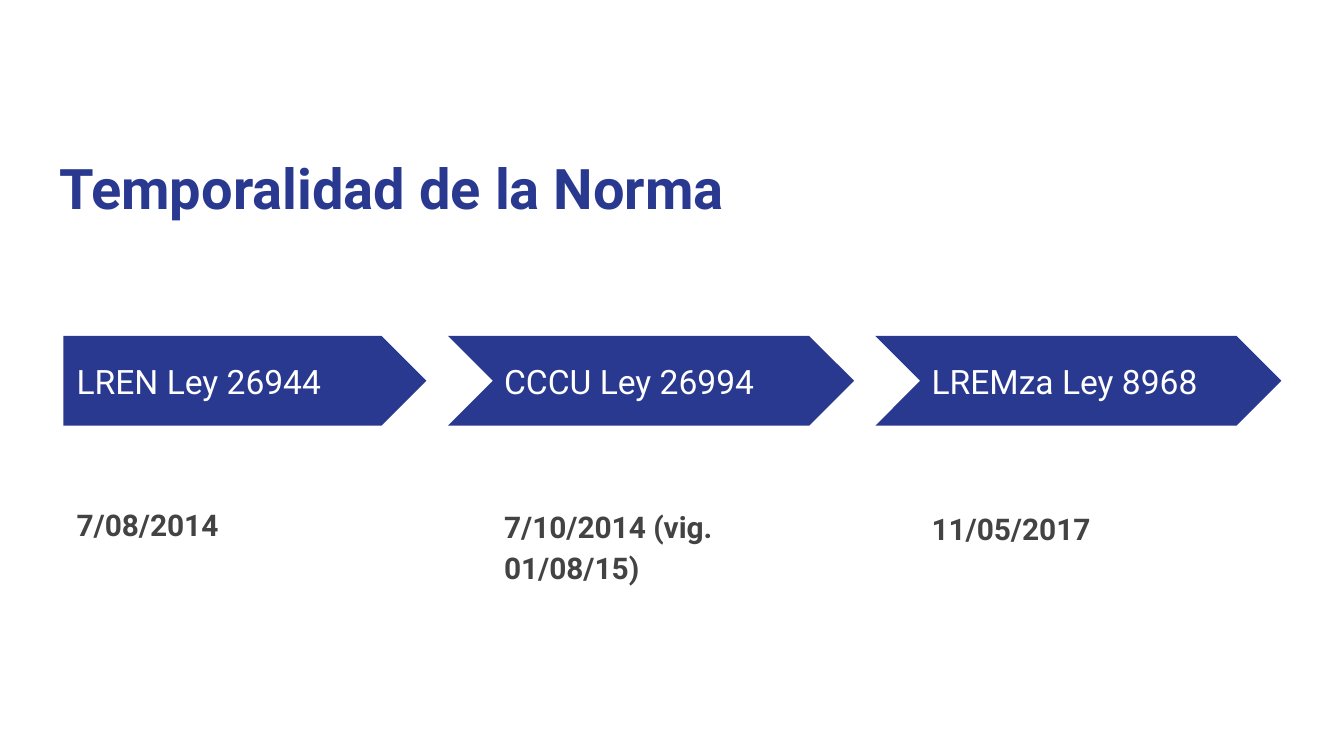
from pptx import Presentation
from pptx.dml.color import RGBColor
from pptx.enum.shapes import MSO_SHAPE
from pptx.enum.text import MSO_ANCHOR, MSO_AUTO_SIZE, PP_ALIGN
from pptx.util import Pt

COLORS = {"navy": "2A3990", "white": "FFFFFF", "gray": "434343"}
FONT = "Roboto"
INSET = 7.2


class Deck:
    def __init__(self, slide):
        self.slide = slide

    def place(self, shape, box):
        shape.left, shape.top, shape.width, shape.height = map(Pt, box)

    def label(self, shape, text, size, color, bold=False,
              anchor=MSO_ANCHOR.TOP, space=1.0):
        frame = shape.text_frame
        frame.text = text
        frame.word_wrap = True
        frame.auto_size = MSO_AUTO_SIZE.NONE
        frame.vertical_anchor = anchor
        frame.margin_left = frame.margin_right = Pt(INSET)
        frame.margin_top = frame.margin_bottom = Pt(INSET)
        line = frame.paragraphs[0]
        line.alignment = PP_ALIGN.LEFT
        line.line_spacing = space
        font = line.runs[0].font
        font.name, font.size, font.bold = FONT, Pt(size), bold
        font.color.rgb = RGBColor.from_string(COLORS[color])

    def title(self, text, box):
        shape = self.slide.shapes.title
        self.place(shape, box)
        self.label(shape, text, 30, "navy", bold=True)

    def arrow(self, kind, box):
        shape = self.slide.shapes.add_shape(kind, *map(Pt, box))
        shape.adjustments[0] = 0.5
        shape.shadow.inherit = False
        shape.fill.solid()
        shape.fill.fore_color.rgb = RGBColor.from_string(COLORS["navy"])
        shape.line.fill.background()

    def text(self, text, box, size, color, **style):
        shape = self.slide.shapes.add_textbox(*map(Pt, box))
        self.label(shape, text, size, color, **style)


def main():
    deck = Presentation()
    deck.slide_width, deck.slide_height = Pt(720), Pt(405)
    page = Deck(deck.slides.add_slide(deck.slide_layouts[5]))

    # Heading
    page.title("Temporalidad de la Norma", (24.5, 75, 671, 47.5))

    # Timeline: law, date and top of the date
    steps = [
        ("LREN Ley 26944", "7/08/2014", 261.4),
        ("CCCU Ley 26994", "7/10/2014 (vig. 01/08/15)", 262.2),
        ("LREMza Ley 8968", "11/05/2017", 263.6),
    ]
    left, step, width, notch = 34, 229, 194.5, 23
    for i, (law, date, top) in enumerate(steps):
        x = left + i * step
        # The first arrow has a flat start, the others a notch
        kind = MSO_SHAPE.CHEVRON if i else MSO_SHAPE.PENTAGON
        back = notch if i else 0
        page.arrow(kind, (x - back, 180, width + back, 48))
        page.text(law, (x, 191.8, 178, 24.5), 18, "white",
                  anchor=MSO_ANCHOR.MIDDLE)
        page.text(date, (x, top, width, 120), 16, "gray",
                  bold=True, space=1.15)

    deck.save("out.pptx")


if __name__ == "__main__":
    main()
